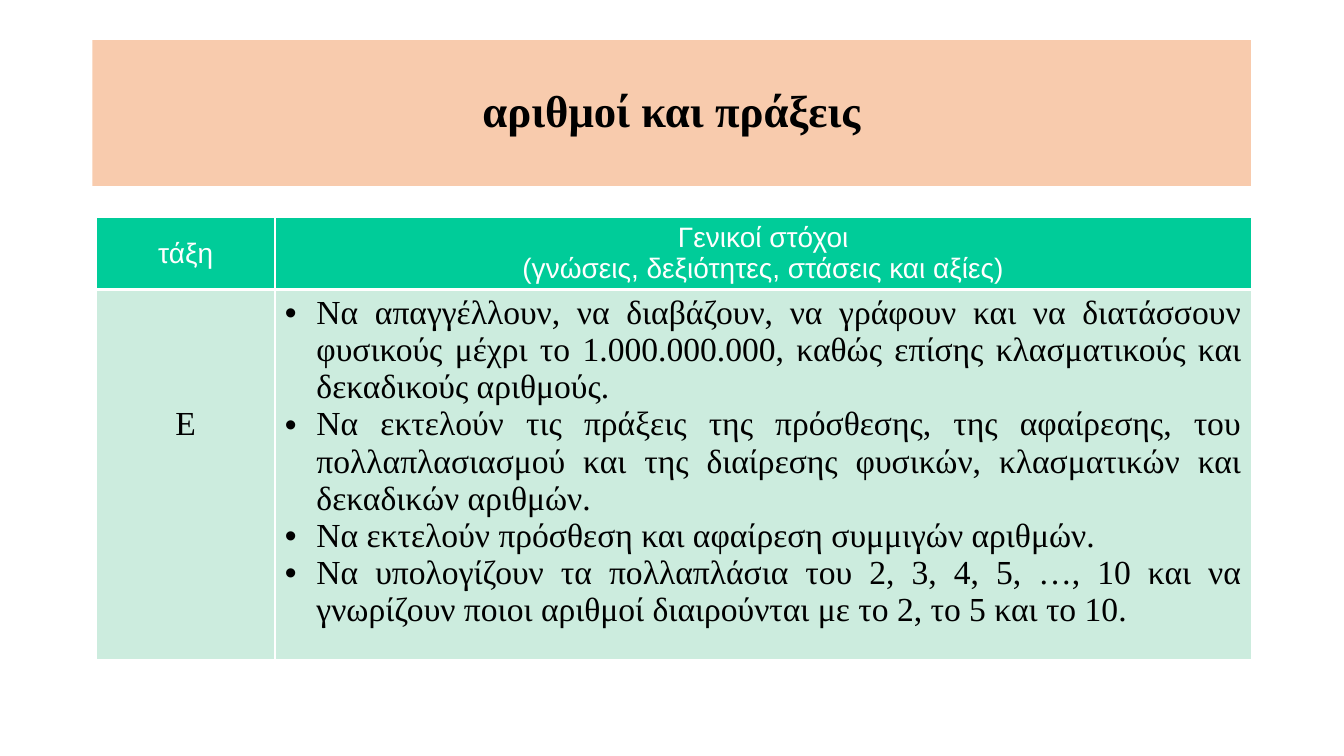
from lxml import etree
from pptx import Presentation
from pptx.dml.color import RGBColor
from pptx.enum.text import MSO_ANCHOR, PP_ALIGN
from pptx.oxml.ns import qn
from pptx.util import Pt

CENTER, JUSTIFY = PP_ALIGN.CENTER, PP_ALIGN.JUSTIFY
TOP, MIDDLE = MSO_ANCHOR.TOP, MSO_ANCHOR.MIDDLE
BLACK = RGBColor(0x00, 0x00, 0x00)
WHITE = RGBColor(0xFF, 0xFF, 0xFF)
PEACH = RGBColor(0xF8, 0xCB, 0xAD)
GREEN = RGBColor(0x00, 0xCC, 0x99)
MINT = RGBColor(0xCC, 0xEC, 0xDE)
SERIF, SANS = "Times New Roman", "Arial"

GRADE_TOP_MARGIN = 83
BULLET_INDENT = 22.5
GOALS = [
    "Να απαγγέλλουν, να διαβάζουν, να γράφουν και να διατάσσουν φυσικούς μέχρι το 1.000.000.000, "
    "καθώς επίσης κλασματικούς και δεκαδικούς αριθμούς.",
    "Να εκτελούν τις πράξεις της πρόσθεσης, της αφαίρεσης, του πολλαπλασιασμού και της διαίρεσης "
    "φυσικών, κλασματικών και δεκαδικών αριθμών.",
    "Να εκτελούν πρόσθεση και αφαίρεση συμμιγών αριθμών.",
    "Να υπολογίζουν τα πολλαπλάσια του 2, 3, 4, 5, …, 10 και να γνωρίζουν ποιοι αριθμοί "
    "διαιρούνται με το 2, το 5 και το 10.",
]


class GoalsSlide:
    def __init__(self, presentation):
        self.slide = presentation.slides.add_slide(presentation.slide_layouts[5])

    def run(self, paragraph, text, font, size, color, bold=False):
        run = paragraph.add_run()
        run.text = text
        run.font.name, run.font.size, run.font.bold = font, Pt(size), bold
        run.font.color.rgb = color

    def title(self, text, left, top, width, height):
        heading = self.slide.shapes.title
        heading.left, heading.top = Pt(left), Pt(top)
        heading.width, heading.height = Pt(width), Pt(height)
        heading.fill.solid()
        heading.fill.fore_color.rgb = PEACH
        heading.text_frame.vertical_anchor = MIDDLE
        paragraph = heading.text_frame.paragraphs[0]
        paragraph.alignment = CENTER
        paragraph.line_spacing = 0.9
        self.run(paragraph, text, SERIF, 32, BLACK, bold=True)

    def table(self, left, top, widths, heights):
        table = self.slide.shapes.add_table(
            len(heights), len(widths), Pt(left), Pt(top), Pt(sum(widths)), Pt(sum(heights))
        ).table
        for column, width in zip(table.columns, widths):
            column.width = Pt(width)
        for row, height in zip(table.rows, heights):
            row.height = Pt(height)
        return table

    def cell(self, cell, fill, anchor, bottom_border):
        cell.vertical_anchor = anchor
        for side, width in (("L", 1), ("R", 1), ("T", 1), ("B", bottom_border)):
            line = etree.SubElement(cell._tc.get_or_add_tcPr(), qn(f"a:ln{side}"), w=str(Pt(width)))
            solid = etree.SubElement(line, qn("a:solidFill"))
            etree.SubElement(solid, qn("a:srgbClr"), val=str(WHITE))
        cell.fill.solid()
        cell.fill.fore_color.rgb = fill

    def header(self, cell, lines):
        self.cell(cell, GREEN, MIDDLE, 3)
        paragraph = cell.text_frame.paragraphs[0]
        paragraph.alignment = CENTER
        for index, line in enumerate(lines):
            if index:
                paragraph.add_line_break()
            self.run(paragraph, line, SANS, 20, WHITE)

    def grade(self, cell, text):
        self.cell(cell, MINT, TOP, 1)
        cell.margin_top = Pt(GRADE_TOP_MARGIN)
        paragraph = cell.text_frame.paragraphs[0]
        paragraph.alignment = CENTER
        self.run(paragraph, text, SERIF, 24, BLACK)

    def bullets(self, cell, items):
        self.cell(cell, MINT, TOP, 1)
        frame = cell.text_frame
        for index, item in enumerate(items):
            paragraph = frame.add_paragraph() if index else frame.paragraphs[0]
            paragraph.alignment = JUSTIFY
            properties = paragraph._p.get_or_add_pPr()
            properties.set("marL", str(Pt(BULLET_INDENT)))
            properties.set("indent", str(-Pt(BULLET_INDENT)))
            etree.SubElement(properties, qn("a:buFont"), typeface=SANS)
            etree.SubElement(properties, qn("a:buChar"), char="•")
            self.run(paragraph, item, SERIF, 24, BLACK)


def main():
    presentation = Presentation()
    presentation.slide_width, presentation.slide_height = Pt(960.5), Pt(540)
    page = GoalsSlide(presentation)
    page.title("αριθμοί και πράξεις", 66, 28.75, 828, 104)
    goals_table = page.table(69, 155, [127.5, 698], [51.5, 264])
    page.header(goals_table.cell(0, 0), ["τάξη"])
    page.header(goals_table.cell(0, 1), ["Γενικοί στόχοι", "(γνώσεις, δεξιότητες, στάσεις και αξίες)"])
    page.grade(goals_table.cell(1, 0), "Ε")
    page.bullets(goals_table.cell(1, 1), GOALS)
    presentation.save("out.pptx")


if __name__ == "__main__":
    main()
